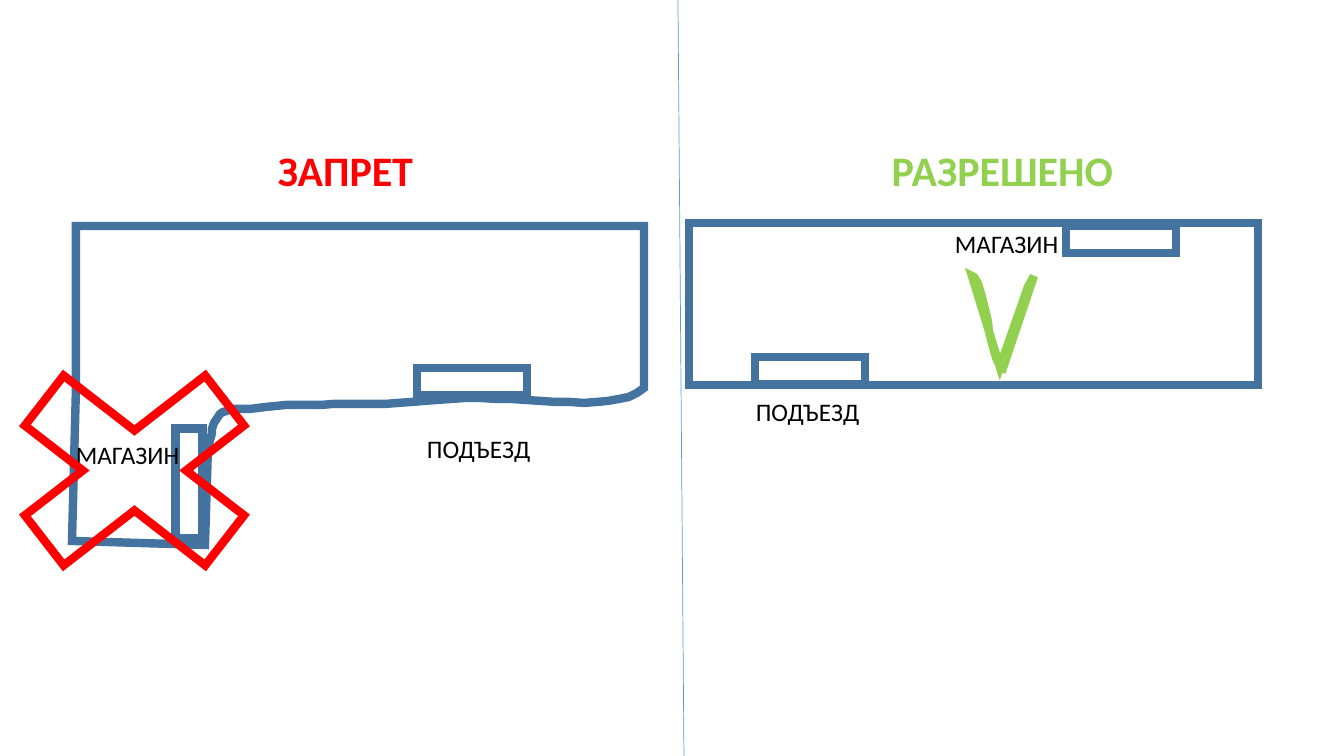
import pptx
import pptx.dml.color
import pptx.enum.shapes
import pptx.enum.text
import pptx.oxml.ns
import pptx.util
from lxml import etree

RGB = pptx.dml.color.RGBColor
SHAPE = pptx.enum.shapes.MSO_SHAPE
qn = pptx.oxml.ns.qn

PX = 914400 / 100.8
WHITE = RGB(0xFF, 0xFF, 0xFF)
BLACK = RGB(0, 0, 0)
WALL = RGB(0x43, 0x73, 0x9E)
RED = RGB(0xFF, 0, 0)
GREEN = RGB(0x92, 0xD0, 0x50)
DIVIDER = RGB(0x5B, 0x9B, 0xD5)

HEADING = {"size": pptx.util.Pt(30), "bold": True, "name": "Calibri"}
LABEL = {"size": pptx.util.Pt(18), "bold": False, "name": "Calibri"}
HEADING_SIZE = (387, 61)
LABEL_SIZE = (135, 72)
DOOR_SIZE = (110, 27)


def emu(*lengths):
    return [pptx.util.Emu(round(n * PX)) for n in lengths]


def outline(sp, color, fill=None):
    """Give a shape a thick mitred outline and an optional solid fill."""
    sp.shadow.inherit = False
    if fill is None:
        sp.fill.background()
    else:
        sp.fill.solid()
        sp.fill.fore_color.rgb = fill
    sp.line.color.rgb = color
    sp.line.width = pptx.util.Pt(6)
    ln = sp.line._get_or_add_ln()
    etree.SubElement(ln, qn("a:miter"), lim="800000")


def add_text(s, x, y, size, text, font, color, align=pptx.enum.text.PP_ALIGN.LEFT):
    tf = s.shapes.add_textbox(*emu(x, y, *size)).text_frame
    tf.word_wrap = True
    p = tf.paragraphs[0]
    p.alignment = align
    r = p.add_run()
    r.text = text
    for name, value in font.items():
        setattr(r.font, name, value)
    r.font.color.rgb = color


def add_heading(s, x, y, text, color):
    add_text(s, x, y, HEADING_SIZE, text, HEADING, color, pptx.enum.text.PP_ALIGN.CENTER)


def add_label(s, x, y, text):
    add_text(s, x, y, LABEL_SIZE, text, LABEL, BLACK)


def add_preset(s, kind, x, y, size, color, fill=None):
    sp = s.shapes.add_shape(kind, *emu(x, y, *size))
    outline(sp, color, fill)
    return sp


def add_door(s, x, y):
    return add_preset(s, SHAPE.FLOWCHART_PROCESS, x, y, DOOR_SIZE, WALL)


def bezier(start, c1, c2, end, steps=16):
    """Return the points along a cubic curve, without its start."""
    points = []
    for i in range(1, steps + 1):
        t = i / steps
        weights = ((1 - t) ** 3, 3 * t * (1 - t) ** 2, 3 * t * t * (1 - t), t ** 3)
        points.append(tuple(sum(w * c for w, c in zip(weights, axis))
                            for axis in zip(start, c1, c2, end)))
    return points


def add_outline(s, x, y, start, segments, color):
    """Draw a closed outline; a segment is one point, or three for a curve."""
    points = [start]
    for segment in segments:
        points += bezier(points[-1], *segment) if len(segment) == 3 else segment
    builder = s.shapes.build_freeform(*start, scale=PX)
    builder.add_line_segments(points[1:], close=True)
    outline(builder.convert_to_shape(*emu(x, y)), color, WHITE)


def forbidden_panel(s, x, y):
    add_heading(s, x + 152, y + 140, "ЗАПРЕТ", RED)
    add_outline(s, x, y, (76, 226), [
        [(644, 226)],
        [(644, 388)],
        [(612, 418), (510, 391), (437, 400)],
        [(371, 408), (288, 401), (250, 409)],
        [(208, 405), (215, 428), (208, 448)],
        [(205, 545)],
        [(72, 541)],
        [(76, 388)],
    ], WALL)
    add_door(s, x + 134, y + 470).rotation = 90
    add_label(s, x + 417, y + 428, "ПОДЪЕЗД")
    add_label(s, x + 66, y + 434, "МАГАЗИН")
    add_preset(s, SHAPE.MATH_MULTIPLY, x - 39, y + 336, (347, 269), RED)
    add_door(s, x + 417, y + 368)


def allowed_panel(s, x, y):
    add_heading(s, x + 129, y + 140, "РАЗРЕШЕНО", GREEN)
    add_preset(s, SHAPE.RECTANGLE, x + 9, y + 223, (569, 162), WALL, WHITE)
    add_door(s, x + 75, y + 357)
    add_label(s, x + 66, y + 391, "ПОДЪЕЗД")
    add_label(s, x + 265, y + 223, "МАГАЗИН")
    add_outline(s, x, y, (292, 276), [
        [(303, 276), (312, 368), (323, 368)],
        [(354, 276)],
        [(348, 287)],
        [(320, 367)],
    ], GREEN)
    add_door(s, x + 386, y + 226)


def add_divider(s, x1, y1, x2, y2):
    line = s.shapes.add_connector(pptx.enum.shapes.MSO_CONNECTOR.STRAIGHT,
                                  *emu(x1, y1, x2, y2))
    line.line.color.rgb = DIVIDER
    line.line.width = pptx.util.Pt(0.5)
    etree.SubElement(line._element.spPr, qn("a:effectLst"))


def main():
    prs = pptx.Presentation()
    prs.slide_width, prs.slide_height = emu(1344, 756)
    s = prs.slides.add_slide(prs.slide_layouts[6])
    forbidden_panel(s, 0, 0)
    add_divider(s, 678, 0, 684, 756)
    allowed_panel(s, 680, 0)
    prs.save("out.pptx")


if __name__ == "__main__":
    main()
